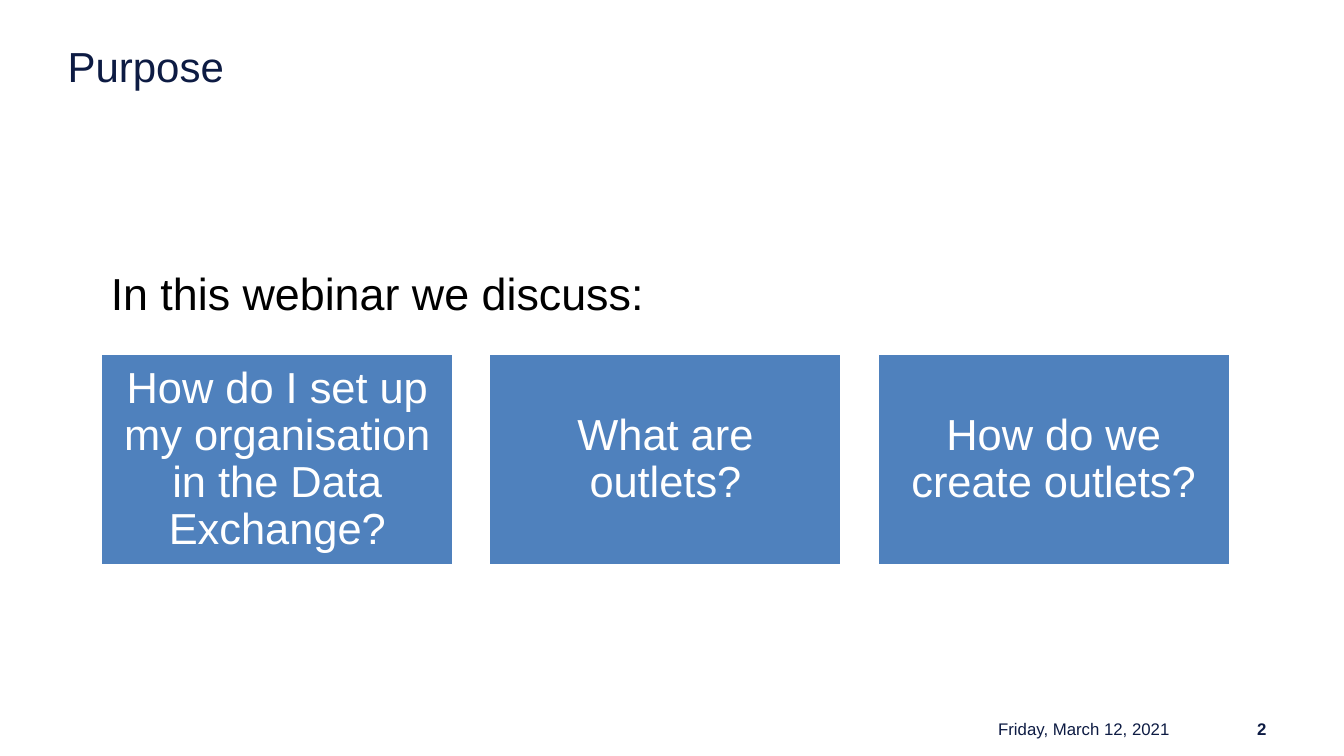
from dataclasses import dataclass

from pptx import Presentation
from pptx import util as u
from pptx.dml.color import RGBColor
from pptx.enum import shapes, text


@dataclass(frozen=True)
class Theme:
    font: str = "Arial"
    navy: str = "0D1B43"
    blue: str = "4F81BD"
    white: str = "FFFFFF"
    black: str = "000000"
    title: int = 30
    lead: int = 32
    card: int = 31
    footer: int = 12


T = Theme()
WIDTH, HEIGHT = 13.33, 7.5
LEFT, CARD_TOP = 1, 3.51
CARD_W, CARD_H, GAP = 3.5, 2.1, 0.35
FOOTER_TOP, FOOTER_H = 7.12, 0.23

QUESTIONS = (
    "How do I set up my organisation in the Data Exchange?",
    "What are outlets?",
    "How do we create outlets?",
)


def box(left, top, width, height):
    return [u.Inches(v) for v in (left, top, width, height)]


def write(sp, content, size, color, bold=False, align=text.PP_ALIGN.LEFT,
          anchor=text.MSO_ANCHOR.TOP, inset=None, spacing=None):
    tf = sp.text_frame
    tf.word_wrap = True
    tf.auto_size = text.MSO_AUTO_SIZE.NONE
    tf.vertical_anchor = anchor
    if inset is not None:
        tf.margin_left = tf.margin_right = u.Inches(inset)
        tf.margin_top = tf.margin_bottom = u.Inches(inset)
    p = tf.paragraphs[0]
    p.alignment = align
    if spacing is not None:
        p.line_spacing = spacing
    r = p.add_run()
    r.text = content
    r.font.name = T.font
    r.font.size = u.Pt(size)
    r.font.bold = bold
    r.font.color.rgb = RGBColor.from_string(color)


def add_title(s, content):
    sp = s.shapes.title
    sp.left, sp.top, sp.width, sp.height = box(0.67, 0.4, 12, 0.66)
    write(sp, content, T.title, T.navy, inset=0)


def add_text(s, place, content, size, color, **fmt):
    write(s.shapes.add_textbox(*box(*place)), content, size, color, **fmt)


def add_card(s, column, content):
    left = LEFT + column * (CARD_W + GAP)
    sp = s.shapes.add_shape(shapes.MSO_SHAPE.RECTANGLE,
                            *box(left, CARD_TOP, CARD_W, CARD_H))
    sp.shadow.inherit = False
    sp.fill.solid()
    sp.fill.fore_color.rgb = RGBColor.from_string(T.blue)
    sp.line.color.rgb = RGBColor.from_string(T.white)
    sp.line.width = u.Pt(2)
    write(sp, content, T.card, T.white, align=text.PP_ALIGN.CENTER,
          anchor=text.MSO_ANCHOR.MIDDLE, inset=0.13, spacing=0.9)


def add_footer(s, left, width, content, bold=False):
    add_text(s, (left, FOOTER_TOP, width, FOOTER_H), content, T.footer, T.navy,
             bold=bold, align=text.PP_ALIGN.RIGHT,
             anchor=text.MSO_ANCHOR.MIDDLE)


def main():
    prs = Presentation()
    prs.slide_width, prs.slide_height = u.Inches(WIDTH), u.Inches(HEIGHT)
    s = prs.slides.add_slide(prs.slide_layouts.get_by_name("Title Only"))
    add_title(s, "Purpose")
    add_footer(s, 11.57, 1.09, "2", bold=True)
    add_footer(s, 8.59, 3.11, "Friday, March 12, 2021")
    for column, question in enumerate(QUESTIONS):
        add_card(s, column, question)
    add_text(s, (LEFT, 2.59, 7.11, 0.64), "In this webinar we discuss:",
             T.lead, T.black)
    prs.save("out.pptx")


if __name__ == "__main__":
    main()
